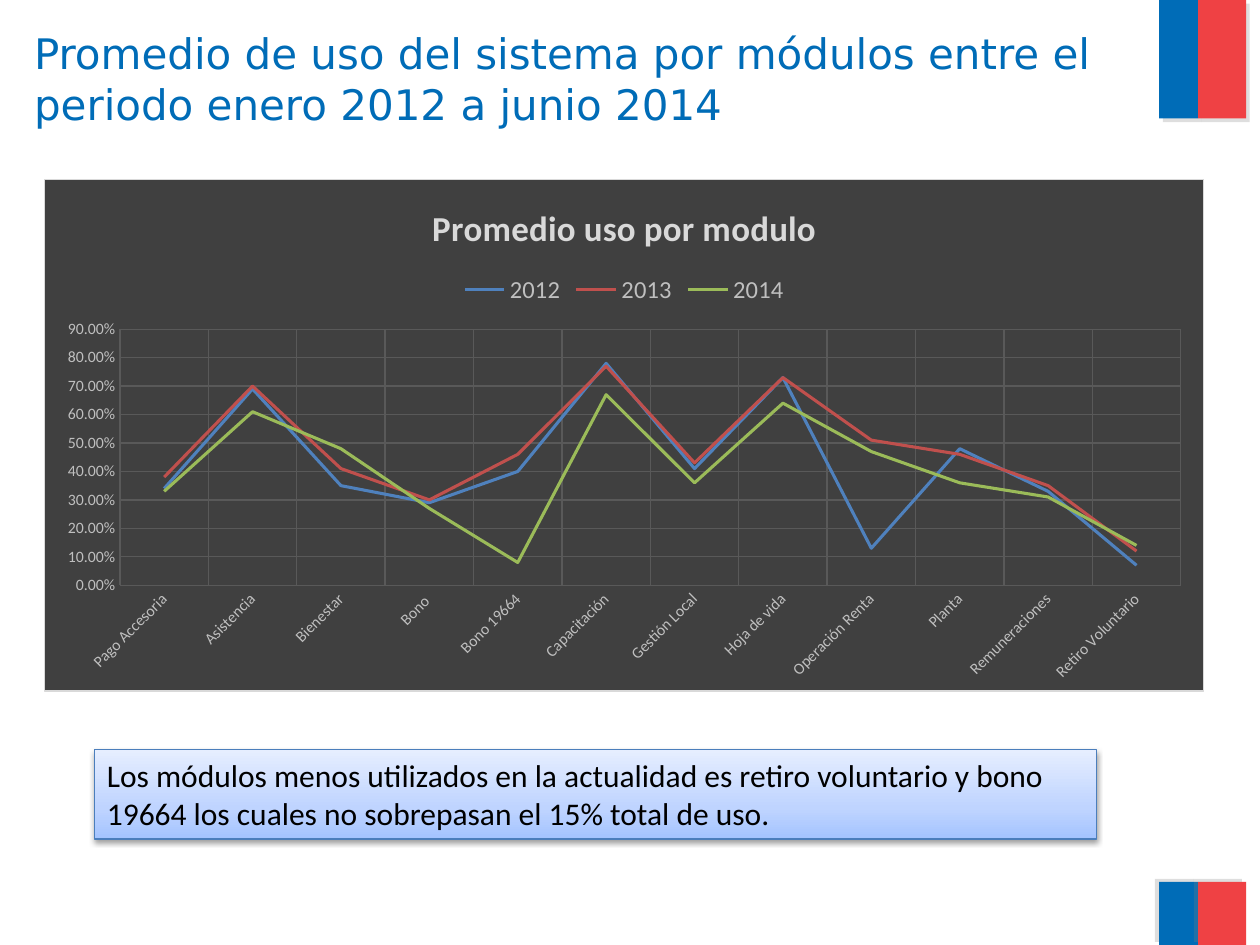
import dataclasses
import copy
import lxml.etree
import pptx
import pptx.chart.data
import pptx.dml.color
import pptx.enum.chart
import pptx.enum.shapes
import pptx.enum.text
import pptx.oxml
import pptx.oxml.ns
import pptx.util

Inches = pptx.util.Inches
Pt = pptx.util.Pt
qn = pptx.oxml.ns.qn
rgb = pptx.dml.color.RGBColor.from_string


@dataclasses.dataclass(frozen=True)
class Theme:
    blue: str = "006CB7"
    red: str = "EF4144"
    band_shadow: str = "808080"
    text: str = "000000"
    panel: str = "404040"
    panel_border: str = "D9D9D9"
    grid: str = "595959"
    chart_title: str = "D9D9D9"
    chart_text: str = "BFBFBF"
    series: tuple = ("4F81BD", "C0504D", "9BBB59")
    gradient: tuple = ((0, "A4C4FF"), (0.35, "BFD4FF"), (1, "E6EEFF"))
    note_line: str = "4B7EBC"
    title_font: str = "DejaVu Sans"
    body_font: str = "Calibri"
    title_size: int = 24
    note_size: int = 18
    chart_title_size: int = 20
    legend_size: int = 14
    axis_size: int = 9


theme = Theme()


def style_font(font, name, size, color, bold=False):
    font.name = name
    font.size = Pt(size)
    font.bold = bold
    font.color.rgb = rgb(color)


def add_shadow(shape, color, opacity, blur, distance, angle):
    shape.shadow.inherit = False
    effects = shape.element.spPr.find(qn("a:effectLst"))
    shadow = lxml.etree.SubElement(
        effects, qn("a:outerShdw"), blurRad=str(Pt(blur)), dist=str(Pt(distance)),
        dir=str(angle * 60000), algn="ctr", rotWithShape="0")
    tone = lxml.etree.SubElement(shadow, qn("a:srgbClr"), val=color)
    lxml.etree.SubElement(tone, qn("a:alpha"), val=str(opacity * 1000))


deck = pptx.Presentation()
deck.slide_width = Inches(10)
deck.slide_height = Inches(7.5)
page = deck.slides.add_slide(deck.slide_layouts[5])
rectangle = pptx.enum.shapes.MSO_SHAPE.RECTANGLE

for top, height, angle in ((0, 0.94, 45), (7, 0.5, 215)):
    for left, width, color in ((9.2, 0.31, theme.blue), (9.51, 0.38, theme.red)):
        band = page.shapes.add_shape(
            rectangle, Inches(left), Inches(top), Inches(width), Inches(height))
        band.fill.solid()
        band.fill.fore_color.rgb = rgb(color)
        band.line.fill.background()
        add_shadow(band, theme.band_shadow, 25, 0, 3, angle)

title = page.shapes.title
title.left, title.top = Inches(0.17), Inches(0.17)
title.width, title.height = Inches(8.93), Inches(1.25)
title.text_frame.text = "Promedio de uso del sistema por módulos entre el periodo enero 2012 a junio 2014"
title.text_frame.word_wrap = True
title.text_frame.auto_size = pptx.enum.text.MSO_AUTO_SIZE.NONE
title.text_frame.vertical_anchor = pptx.enum.text.MSO_ANCHOR.TOP
heading = title.text_frame.paragraphs[0]
heading.alignment = pptx.enum.text.PP_ALIGN.LEFT
style_font(heading.runs[0].font, theme.title_font, theme.title_size, theme.blue)

usage = pptx.chart.data.CategoryChartData(number_format="0.00%")
usage.categories = [
    "Pago Accesoria", "Asistencia", "Bienestar", "Bono ", "Bono 19664", "Capacitación",
    "Gestión Local", "Hoja de vida", "Operación Renta", "Planta", "Remuneraciones",
    "Retiro Voluntario"]
usage.add_series("2012", (0.34, 0.69, 0.35, 0.29, 0.4, 0.78, 0.41, 0.73, 0.13, 0.48, 0.33, 0.07))
usage.add_series("2013", (0.38, 0.7, 0.41, 0.3, 0.46, 0.77, 0.43, 0.73, 0.51, 0.46, 0.35, 0.12))
usage.add_series("2014", (0.33, 0.61, 0.48, 0.27, 0.08, 0.67, 0.36, 0.64, 0.47, 0.36, 0.31, 0.14))
chart = page.shapes.add_chart(
    pptx.enum.chart.XL_CHART_TYPE.LINE,
    Inches(0.35), Inches(1.42), Inches(9.21), Inches(4.07), usage).chart
style_font(chart.font, theme.body_font, 10, theme.text)

chart.has_title = True
chart.chart_title.include_in_layout = False
chart.chart_title.text_frame.text = "Promedio uso por modulo"
style_font(chart.chart_title.text_frame.paragraphs[0].runs[0].font,
           theme.body_font, theme.chart_title_size, theme.chart_title, bold=True)
chart.has_legend = True
chart.legend.position = pptx.enum.chart.XL_LEGEND_POSITION.TOP
chart.legend.include_in_layout = False
style_font(chart.legend.font, theme.body_font, theme.legend_size, theme.chart_text)

for axis in (chart.category_axis, chart.value_axis):
    axis.has_major_gridlines = True
    axis.major_gridlines.format.line.color.rgb = rgb(theme.grid)
    axis.major_gridlines.format.line.width = Pt(0.75)
    axis.major_tick_mark = pptx.enum.chart.XL_TICK_MARK.NONE
    axis.minor_tick_mark = pptx.enum.chart.XL_TICK_MARK.NONE
    axis.format.line.fill.background()
    style_font(axis.tick_labels.font, theme.body_font, theme.axis_size, theme.chart_text)
label_body = chart.category_axis._element.find(qn("c:txPr")).find(qn("a:bodyPr"))
label_body.set("rot", str(-45 * 60000))
label_body.set("vert", "horz")
chart.value_axis.minimum_scale = 0
chart.value_axis.maximum_scale = 0.9
chart.value_axis.major_unit = 0.1
chart.value_axis.tick_labels.number_format = "0.00%"
chart.value_axis.tick_labels.number_format_is_linked = False

chart.plots[0].vary_by_categories = False
for series, color in zip(chart.plots[0].series, theme.series):
    series.smooth = False
    series.format.line.color.rgb = rgb(color)
    series.format.line.width = Pt(1.75)

panel = pptx.oxml.parse_xml(
    f'<c:spPr {pptx.oxml.ns.nsdecls("c", "a")}>'
    f'<a:solidFill><a:srgbClr val="{theme.panel}"/></a:solidFill>'
    f'<a:ln w="{Pt(0.75)}"><a:solidFill><a:srgbClr val="{theme.panel_border}"/>'
    '</a:solidFill></a:ln></c:spPr>')
chart.element.find(qn("c:chart")).addnext(panel)

note = page.shapes.add_shape(rectangle, Inches(0.75), Inches(5.95), Inches(7.95), Inches(0.71))
note.fill.gradient()
note.fill.gradient_angle = 90
stop_list = note.element.spPr.find(qn("a:gradFill")).find(qn("a:gsLst"))
stop_list.append(copy.deepcopy(stop_list[0]))
for stop, (position, color) in zip(note.fill.gradient_stops, theme.gradient):
    stop.position = position
    stop.color.rgb = rgb(color)
note.line.color.rgb = rgb(theme.note_line)
note.line.width = Pt(0.75)
add_shadow(note, theme.text, 38, 3.1, 1.6, 90)
note.text_frame.text = (
    "Los módulos menos utilizados en la actualidad es retiro voluntario y bono 19664 "
    "los cuales no sobrepasan el 15% total de uso.")
note.text_frame.word_wrap = True
note.text_frame.auto_size = pptx.enum.text.MSO_AUTO_SIZE.SHAPE_TO_FIT_TEXT
note.text_frame.vertical_anchor = pptx.enum.text.MSO_ANCHOR.TOP
para = note.text_frame.paragraphs[0]
para.alignment = pptx.enum.text.PP_ALIGN.LEFT
style_font(para.runs[0].font, theme.body_font, theme.note_size, theme.text)

deck.save("out.pptx")
